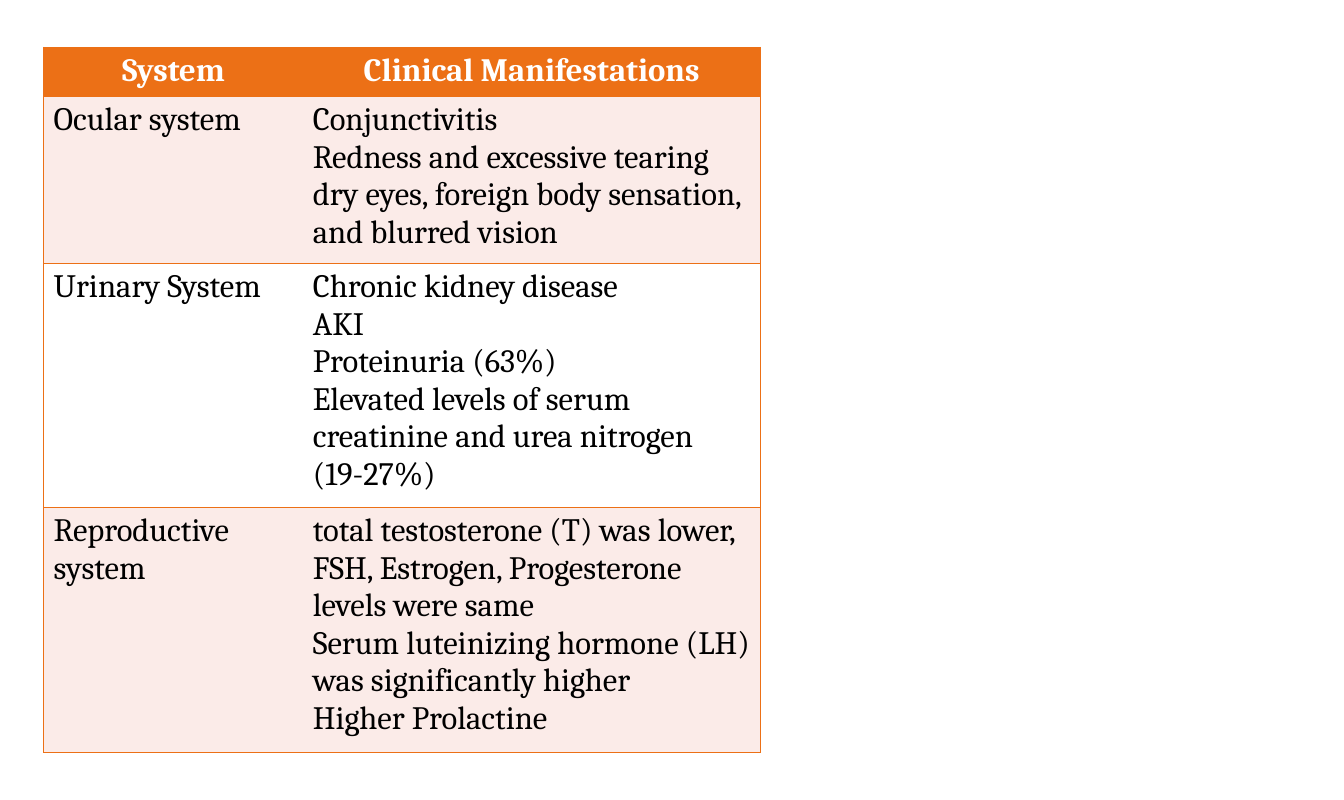
from dataclasses import dataclass

from pptx import Presentation
from pptx.dml.color import RGBColor
from pptx.enum.text import PP_ALIGN as Align
from pptx.oxml import parse_xml
from pptx.oxml.ns import nsdecls
from pptx.table import Table, _Cell as Cell
from pptx.util import Cm, Pt

COLORS = {
    "orange": "EC7016",
    "blush": "FBEBE8",
    "white": "FFFFFF",
    "black": "000000",
}
COLUMN_WIDTHS = (6.73, 11.87)
BORDER_WIDTH = Pt(1)


@dataclass
class SystemRow:
    system: str
    manifestations: list[str]
    height: float
    fill: str
    text_color: str = "black"
    bold: bool = False
    alignment: Align = Align.LEFT


ROWS = [
    SystemRow("System", ["Clinical Manifestations"], 1.28,
              "orange", "white", True, Align.CENTER),
    SystemRow("Ocular system", [
        "Conjunctivitis",
        "Redness and excessive tearing",
        "dry eyes, foreign body sensation, and blurred vision",
    ], 4.34, "blush"),
    SystemRow("Urinary System", [
        "Chronic kidney disease",
        "AKI",
        "Proteinuria (63%)",
        "Elevated levels of serum creatinine and urea nitrogen (19-27%)",
    ], 6.33, "white"),
    SystemRow("Reproductive system", [
        "total testosterone (T) was lower, FSH, Estrogen, Progesterone levels were same",
        "Serum luteinizing hormone (LH) was significantly higher",
        "Higher Prolactine",
    ], 6.36, "blush"),
]


def set_borders(cell: Cell, visible_sides: str) -> None:
    """Draw orange borders on the given sides and clear the others."""
    properties = cell._tc.get_or_add_tcPr()
    for side in "LRTB":
        if side in visible_sides:
            paint = f'<a:solidFill><a:srgbClr val="{COLORS["orange"]}"/></a:solidFill>'
        else:
            paint = "<a:noFill/>"
        properties.append(parse_xml(
            f'<a:ln{side} {nsdecls("a")} w="{BORDER_WIDTH}">{paint}</a:ln{side}>'))


def fill_cell(cell: Cell, lines: list[str], row: SystemRow) -> None:
    cell.fill.solid()
    cell.fill.fore_color.rgb = RGBColor.from_string(COLORS[row.fill])
    cell.text_frame.text = "\n".join(lines)
    font_format = {"name": "Cambria", "size": Pt(24), "bold": row.bold}
    for paragraph in cell.text_frame.paragraphs:
        paragraph.alignment = row.alignment
        font = paragraph.runs[0].font
        for attribute, value in font_format.items():
            setattr(font, attribute, value)
        font.color.rgb = RGBColor.from_string(COLORS[row.text_color])


def fill_table(table: Table) -> None:
    for column, width in zip(table.columns, COLUMN_WIDTHS):
        column.width = Cm(width)
    for index, row in enumerate(ROWS):
        table.rows[index].height = Cm(row.height)
        system_cell, manifestations_cell = table.rows[index].cells
        set_borders(system_cell, "LTB")
        set_borders(manifestations_cell, "RTB")
        fill_cell(system_cell, [row.system], row)
        fill_cell(manifestations_cell, row.manifestations, row)


def main() -> None:
    presentation = Presentation()
    presentation.slide_width = Cm(34.9)
    presentation.slide_height = Cm(20.78)
    slide = presentation.slides.add_slide(presentation.slide_layouts[6])

    # Table of manifestations by body system
    frame = slide.shapes.add_table(
        len(ROWS), len(COLUMN_WIDTHS), Cm(1.14), Cm(1.23),
        Cm(sum(COLUMN_WIDTHS)), Cm(sum(row.height for row in ROWS)))
    fill_table(frame.table)

    presentation.save("out.pptx")


if __name__ == "__main__":
    main()
